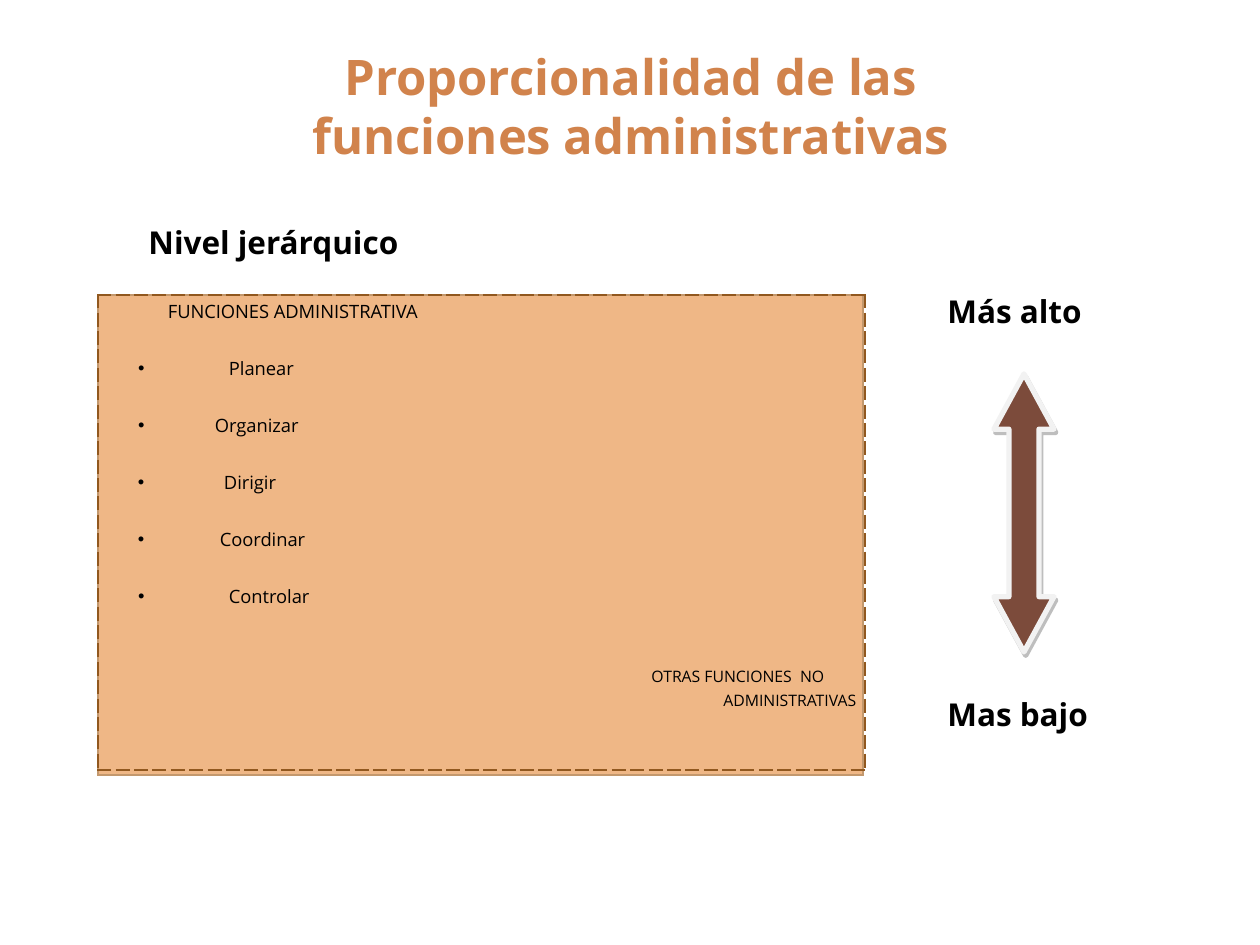
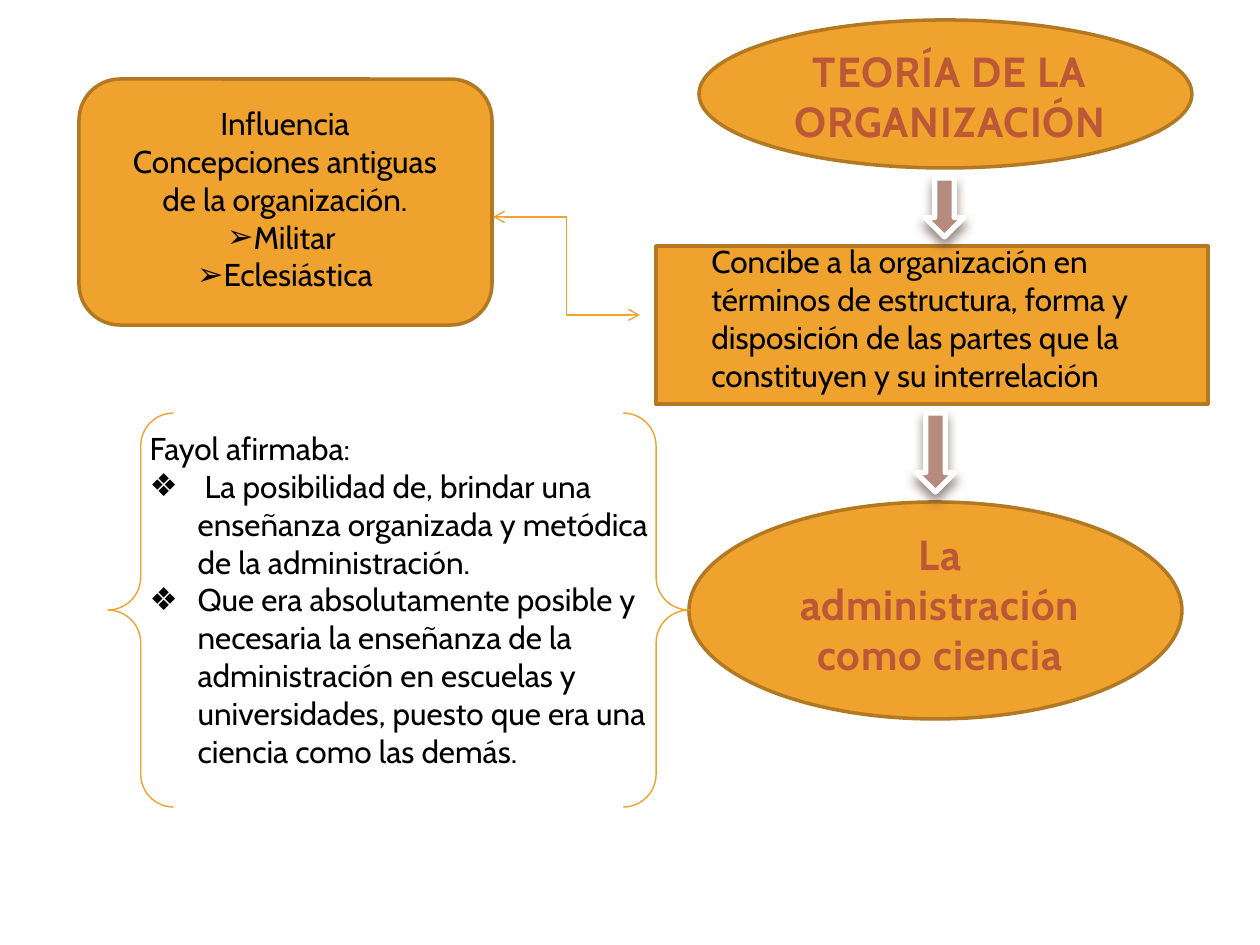
import pptx
import pptx.dml.color
import pptx.enum.dml
import pptx.enum.shapes
import pptx.enum.text
import pptx.oxml
import pptx.oxml.ns
import pptx.util
from lxml import etree

SCALE = 914400 / 126
SHAPES = pptx.enum.shapes.MSO_SHAPE
ALIGN = pptx.enum.text.PP_ALIGN
ANCHOR = pptx.enum.text.MSO_ANCHOR

BLACK, WHITE = "000000", "FFFFFF"
AMBER, AMBER_EDGE = "F0A22E", "B27822"
PEACH, PEACH_EDGE, DASH_EDGE = "EFB786", "C3986D", "91581F"
COPPER, BRICK = "D1834C", "BD5836"
BROWN, BROWN_PALE, PALE_EDGE = "7C4B3B", "B58B80", "F2F2F2"

HEADLINE = {"name": "Open Sans", "size": pptx.util.Pt(28), "bold": True}
LEVEL = {"name": "Open Sans", "size": pptx.util.Pt(18), "bold": True}
DUTY = {"name": "Open Sans", "size": pptx.util.Pt(10.5), "bold": False}
OTHER_DUTY = {"name": "Open Sans", "size": pptx.util.Pt(9), "bold": False}
CONCEPT = {"name": "Cabin", "size": pptx.util.Pt(24), "bold": True}
DETAIL = {"name": "Cabin", "size": pptx.util.Pt(18), "bold": False}

HARD_SHADOW = ("7F7F7F", 50, 0, 2.2, 63)
SOFT_SHADOW = ("4E3B30", 60, 6, 4, 90)


def px(length):
    return pptx.util.Emu(round(length * SCALE))


def color(hex_value):
    return pptx.dml.color.RGBColor.from_string(hex_value)


def set_all(target, values):
    for name, value in values.items():
        setattr(target, name, value)


def place(item, box):
    set_all(item, dict(zip(("left", "top", "width", "height"), map(px, box))))


def sub(parent, tag, **attributes):
    values = {key: str(value) for key, value in attributes.items()}
    return etree.SubElement(parent, pptx.oxml.ns.qn(tag), values)


def write(paragraph, text, font, hex_value=BLACK, spacing=0, **layout):
    run = paragraph.add_run()
    run.text = text
    set_all(run.font, font)
    run.font.color.rgb = color(hex_value)
    if spacing:
        run.font._element.set("spc", str(spacing))
    set_all(paragraph, {"space_before": pptx.util.Pt(0), **layout})


def indent(paragraph, left, first=0, right=0, bullet=None):
    props = paragraph._p.get_or_add_pPr()
    for name, length in (("marL", left), ("indent", first), ("marR", right)):
        props.set(name, str(px(length)))
    if bullet:
        sub(props, "a:buFont", typeface="Arial")
        sub(props, "a:buChar", char=bullet)
    else:
        sub(props, "a:buNone")


def next_paragraph(frame):
    first = frame.paragraphs[0]
    return frame.add_paragraph() if first.runs else first


def prepare(holder, box, anchor=ANCHOR.TOP):
    place(holder, box)
    set_all(holder.text_frame, {
        "word_wrap": True,
        "auto_size": pptx.enum.text.MSO_AUTO_SIZE.NONE,
        "vertical_anchor": anchor,
    })
    return holder.text_frame


def add_label(slide, box, text, font, hex_value=BLACK, align=ALIGN.LEFT, spacing=0):
    frame = prepare(slide.shapes.add_textbox(0, 0, 0, 0), box)
    write(frame.paragraphs[0], text, font, hex_value, spacing, alignment=align)
    return frame


def set_title(slide, box, text, font, hex_value, anchor, spacing=0):
    title = slide.shapes.title
    frame = prepare(title, box, anchor)
    write(frame.paragraphs[0], text, font, hex_value, spacing, alignment=ALIGN.CENTER)
    title._element.getparent().append(title._element)


def add_figure(slide, kind, box, fill=AMBER, edge=AMBER_EDGE, weight=2, shadow=None):
    figure = slide.shapes.add_shape(kind, *map(px, box))
    figure.shadow.inherit = False
    if fill:
        figure.fill.solid()
        figure.fill.fore_color.rgb = color(fill)
    else:
        figure.fill.background()
    figure.line.color.rgb = color(edge)
    figure.line.width = pptx.util.Pt(weight)
    if shadow:
        tint, opacity, blur, distance, angle = shadow
        effects = figure._element.spPr.find(pptx.oxml.ns.qn("a:effectLst"))
        outer = sub(effects, "a:outerShdw", blurRad=pptx.util.Pt(blur),
                    dist=pptx.util.Pt(distance), dir=angle * 60000,
                    algn="ctr", rotWithShape=0)
        sub(sub(outer, "a:srgbClr", val=tint), "a:alpha", val=opacity * 1000)
    return figure


def set_guides(figure, **guides):
    geometry = figure._element.spPr.find(pptx.oxml.ns.qn("a:prstGeom"))
    for old in geometry.findall(pptx.oxml.ns.qn("a:avLst")):
        geometry.remove(old)
    values = sub(geometry, "a:avLst")
    for name, value in guides.items():
        sub(values, "a:gd", name=name, fmla=f"val {value}")


def add_panel(slide, box, fill, edge, weight, dash="solid"):
    table = slide.shapes.add_table(1, 1, *map(px, box)).table
    set_all(table, {"first_row": False, "horz_banding": False})
    cell = table.cell(0, 0)
    set_all(cell, {"margin_left": px(6), "margin_right": px(6),
                   "margin_top": 0, "margin_bottom": 0})
    if fill:
        cell.fill.solid()
        cell.fill.fore_color.rgb = color(fill)
    else:
        cell.fill.background()
    props = cell._tc.get_or_add_tcPr()
    for position, side in enumerate("LRTB"):
        border = sub(props, f"a:ln{side}", w=pptx.util.Pt(weight))
        sub(sub(border, "a:solidFill"), "a:srgbClr", val=edge)
        sub(border, "a:prstDash", val=dash)
        props.insert(position, border)
    return cell.text_frame


def add_elbow(slide, start, end):
    elbow = slide.shapes.add_connector(
        pptx.enum.shapes.MSO_CONNECTOR.ELBOW, *map(px, start + end))
    elbow.line.color.rgb = color(AMBER)
    elbow.line.width = pptx.util.Pt(0.79)
    line = elbow.line._get_or_add_ln()
    for tip in ("a:headEnd", "a:tailEnd"):
        sub(line, tip, type="arrow")
    sub(elbow._element.spPr, "a:effectLst")


def fill_functions(frame):
    heading = frame.paragraphs[0]
    write(heading, "FUNCIONES ADMINISTRATIVA", DUTY, line_spacing=1.15)
    indent(heading, 64)
    duties = (("Planear", 125), ("Organizar", 111), ("Dirigir", 120),
              ("Coordinar", 116), ("Controlar", 125))
    for duty, left in duties:
        paragraph = frame.add_paragraph()
        write(paragraph, duty, DUTY, line_spacing=1.15,
              space_before=pptx.util.Pt(16.3))
        indent(paragraph, left, 34 - left, bullet="•")
    for text, gap, right in (("OTRAS FUNCIONES  NO", 30.5, 33), ("ADMINISTRATIVAS", 0, 1)):
        paragraph = frame.add_paragraph()
        write(paragraph, text, OTHER_DUTY, line_spacing=1.15,
              space_before=pptx.util.Pt(gap), alignment=ALIGN.RIGHT)
        indent(paragraph, 0, right=right)


def build_proportion(deck):
    slide = deck.slides.add_slide(deck.slide_layouts[5])
    fill_functions(add_panel(slide, (98, 295, 765, 480), PEACH, PEACH_EDGE, 0.79))
    add_panel(slide, (98, 295, 767, 475), None, DASH_EDGE, 1, "sysDash")
    level_arrow = add_figure(slide, SHAPES.UP_DOWN_ARROW, (994, 374, 60, 278),
                             BROWN, PALE_EDGE, 3, HARD_SHADOW)
    set_guides(level_arrow, adj1=50000, adj2=92000)
    for text, left, top, width in (("Más alto", 935, 286, 178),
                                   ("Mas bajo", 935, 689, 227),
                                   ("Nivel jerárquico", 136, 217, 394)):
        add_label(slide, (left, top, width, 50), text, LEVEL)
    set_title(slide, (207, 40, 847, 131),
              "Proporcionalidad de las funciones administrativas",
              HEADLINE, COPPER, ANCHOR.MIDDLE)


def build_theory(deck):
    slide = deck.slides.add_slide(deck.slide_layouts[1])
    for kind, box in ((SHAPES.OVAL, (699, 20, 493, 148)),
                      (SHAPES.RECTANGLE, (656, 246, 552, 158)),
                      (SHAPES.OVAL, (689, 502, 493, 217)),
                      (SHAPES.ROUNDED_RECTANGLE, (79, 79, 413, 246))):
        add_figure(slide, kind, box)
    add_figure(slide, SHAPES.DOUBLE_BRACE, (108, 413, 581, 394), None, AMBER, 0.79)
    for box in ((916, 413, 39, 79), (925, 178, 39, 59)):
        add_figure(slide, SHAPES.DOWN_ARROW, box, BROWN_PALE, WHITE, 3, SOFT_SHADOW)
    add_elbow(slide, (493, 217), (640, 315))

    add_label(slide, (699, 236, 498, 165),
              "Concibe a la organización en términos de estructura, forma y "
              "disposición de las partes que la constituyen y su interrelación", DETAIL)
    add_label(slide, (768, 522, 344, 165), "La administración como ciencia",
              CONCEPT, BRICK, ALIGN.CENTER, 50)
    influence = add_label(slide, (108, 98, 354, 280), "Influencia", DETAIL,
                          align=ALIGN.CENTER)
    for text, bullet in (("Concepciones antiguas de la organización.", None),
                         ("Militar ", "➢"), ("Eclesiástica", "➢")):
        paragraph = influence.add_paragraph()
        write(paragraph, text, DETAIL, alignment=ALIGN.CENTER)
        indent(paragraph, 0, bullet=bullet)

    claims = prepare(slide.placeholders[1], (137, 423, 532, 432))
    for text, bullet in (
            ("Fayol afirmaba:", None),
            (" La posibilidad de, brindar una enseñanza organizada y metódica "
             "de la administración.", "❖"),
            ("Que era absolutamente posible y necesaria la enseñanza de la "
             "administración en escuelas y universidades, puesto que era una "
             "ciencia como las demás.", "❖")):
        paragraph = next_paragraph(claims)
        write(paragraph, text, DETAIL)
        indent(paragraph, 48, -48, bullet=bullet)
    set_title(slide, (728, 39, 444, 115), "TEORÍA DE LA ORGANIZACIÓN",
              CONCEPT, BRICK, ANCHOR.TOP, 50)


def main():
    deck = pptx.Presentation()
    deck.slide_width, deck.slide_height = px(1260), px(945)
    build_proportion(deck)
    build_theory(deck)
    deck.save("out.pptx")


if __name__ == "__main__":
    main()
